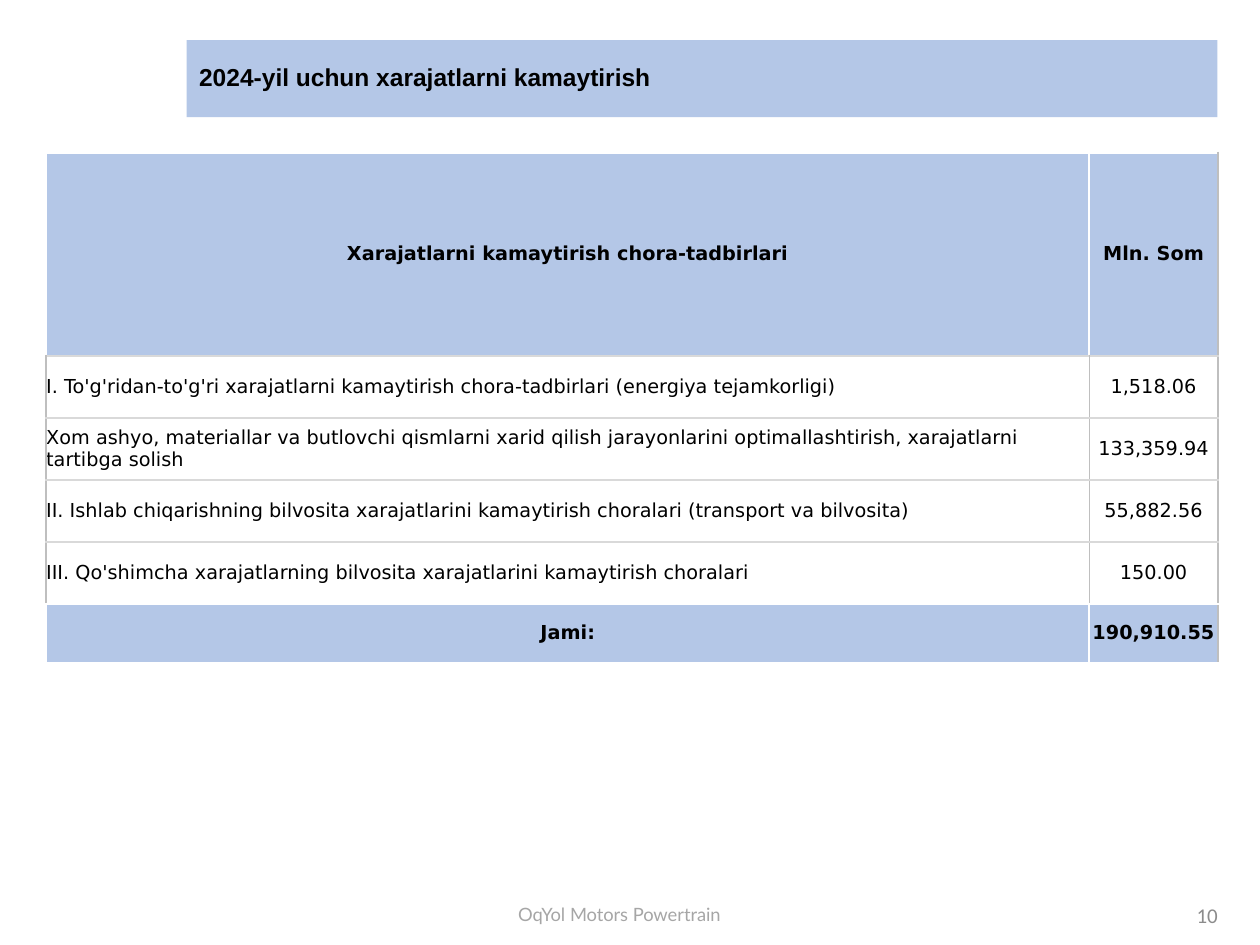
from dataclasses import dataclass

from lxml import etree
from pptx import Presentation
from pptx.dml.color import RGBColor
from pptx.enum.text import MSO_ANCHOR, MSO_AUTO_SIZE, PP_ALIGN
from pptx.oxml.ns import qn
from pptx.util import Cm, Pt

LEFT, MID, RIGHT = PP_ALIGN.LEFT, PP_ALIGN.CENTER, PP_ALIGN.RIGHT
CENTER = MSO_ANCHOR.MIDDLE
FIXED = MSO_AUTO_SIZE.NONE


@dataclass(frozen=True)
class Theme:
    band: str = "B4C7E7"
    ink: str = "000000"
    white: str = "FFFFFF"
    rule: str = "D9D9D9"
    side: str = "BFBFBF"
    foot: str = "A6A6A6"
    page: str = "8C8C8C"
    title_size: float = 14
    cell_size: float = 11
    foot_size: float = 10.5
    page_size: float = 12


THEME = Theme()
COLS = [21.03, 2.59]
HEAD, BODY, TOTAL = 4.09, 1.25, 1.19
ROWS = [
    ("Xarajatlarni kamaytirish chora-tadbirlari", "Mln. Som"),
    ("I. To'g'ridan-to'g'ri xarajatlarni kamaytirish chora-tadbirlari (energiya tejamkorligi)", "1,518.06"),
    ("Xom ashyo, materiallar va butlovchi qismlarni xarid qilish jarayonlarini optimallashtirish, "
     "xarajatlarni tartibga solish", "133,359.94"),
    ("II. Ishlab chiqarishning bilvosita xarajatlarini kamaytirish choralari (transport va bilvosita)",
     "55,882.56"),
    ("III. Qo'shimcha xarajatlarning bilvosita xarajatlarini kamaytirish choralari", "150.00"),
    ("Jami:", "190,910.55"),
]


def write(frame, text, font, size, color, align=LEFT, bold=False):
    frame.text = text
    frame.word_wrap = True
    para = frame.paragraphs[0]
    para.alignment = align
    for run in para.runs:
        run.font.name = font
        run.font.size = Pt(size)
        run.font.bold = bold
        run.font.color.rgb = RGBColor.from_string(color)


def place(shape, left, top, width, height):
    shape.left, shape.top = Cm(left), Cm(top)
    shape.width, shape.height = Cm(width), Cm(height)


def add_title(slide, text):
    title = slide.shapes.title
    place(title, 3.76, 0.81, 20.78, 1.55)
    title.fill.solid()
    title.fill.fore_color.rgb = RGBColor.from_string(THEME.band)
    frame = title.text_frame
    write(frame, text, "Arial", THEME.title_size, THEME.ink, bold=True)
    frame.auto_size = FIXED
    frame.vertical_anchor = CENTER
    frame.paragraphs[0].line_spacing = 0.9


def add_note(slide, text, box, *style):
    frame = slide.shapes.add_textbox(*map(Cm, box)).text_frame
    write(frame, text, *style)
    frame.vertical_anchor = CENTER


def set_edges(cell, edges):
    props = cell._tc.get_or_add_tcPr()
    for spot, (side, color, width) in enumerate(edges):
        line = etree.Element(qn(f"a:ln{side}"), w=str(Pt(width)))
        fill = etree.SubElement(line, qn("a:solidFill"))
        etree.SubElement(fill, qn("a:srgbClr"), val=color)
        props.insert(spot, line)


def find_edges(row, col):
    last = len(ROWS) - 1
    band = row in (0, last)
    grey, white = (THEME.side, 1), (THEME.white, 1.5)
    rule = (THEME.rule, 1.5)
    outer = col == len(COLS) - 1
    edges = [
        ("L", *(white if band else grey)),
        ("R", *(white if band and not outer else grey)),
        ("T", *(white if band else rule)),
        ("B", *(white if row >= last - 1 else rule)),
    ]
    return edges


def style_cell(cell, row, col):
    band = row in (0, len(ROWS) - 1)
    align = MID if band or col else LEFT
    write(cell.text_frame, ROWS[row][col], "DejaVu Sans", THEME.cell_size, THEME.ink, align, band)
    cell.vertical_anchor = CENTER
    cell.margin_left = cell.margin_right = cell.margin_top = cell.margin_bottom = 0
    if band:
        cell.fill.solid()
        cell.fill.fore_color.rgb = RGBColor.from_string(THEME.band)
    else:
        cell.fill.background()
    set_edges(cell, find_edges(row, col))


def add_costs(slide):
    sizes = [HEAD] + [BODY] * (len(ROWS) - 2) + [TOTAL]
    box = map(Cm, (0.93, 3.08, sum(COLS), sum(sizes)))
    table = slide.shapes.add_table(len(ROWS), len(COLS), *box).table
    table.first_row = table.horz_banding = False
    for col, width in zip(table.columns, COLS):
        col.width = Cm(width)
    for row, height in zip(table.rows, sizes):
        row.height = Cm(height)
    for row in range(len(ROWS)):
        for col in range(len(COLS)):
            style_cell(table.cell(row, col), row, col)


def main():
    deck = Presentation()
    deck.slide_width, deck.slide_height = Cm(25.4), Cm(19.05)
    slide = deck.slides.add_slide(deck.slide_layouts[5])
    add_title(slide, "2024-yil uchun xarajatlarni kamaytirish")
    add_costs(slide)
    add_note(slide, "OqYol Motors Powertrain", (9.63, 18.08, 5.72, 0.71),
             "Lato", THEME.foot_size, THEME.foot, MID)
    add_note(slide, "10", (19.08, 17.93, 5.72, 1.02),
             "Calibri", THEME.page_size, THEME.page, RIGHT)
    deck.save("out.pptx")


if __name__ == "__main__":
    main()
